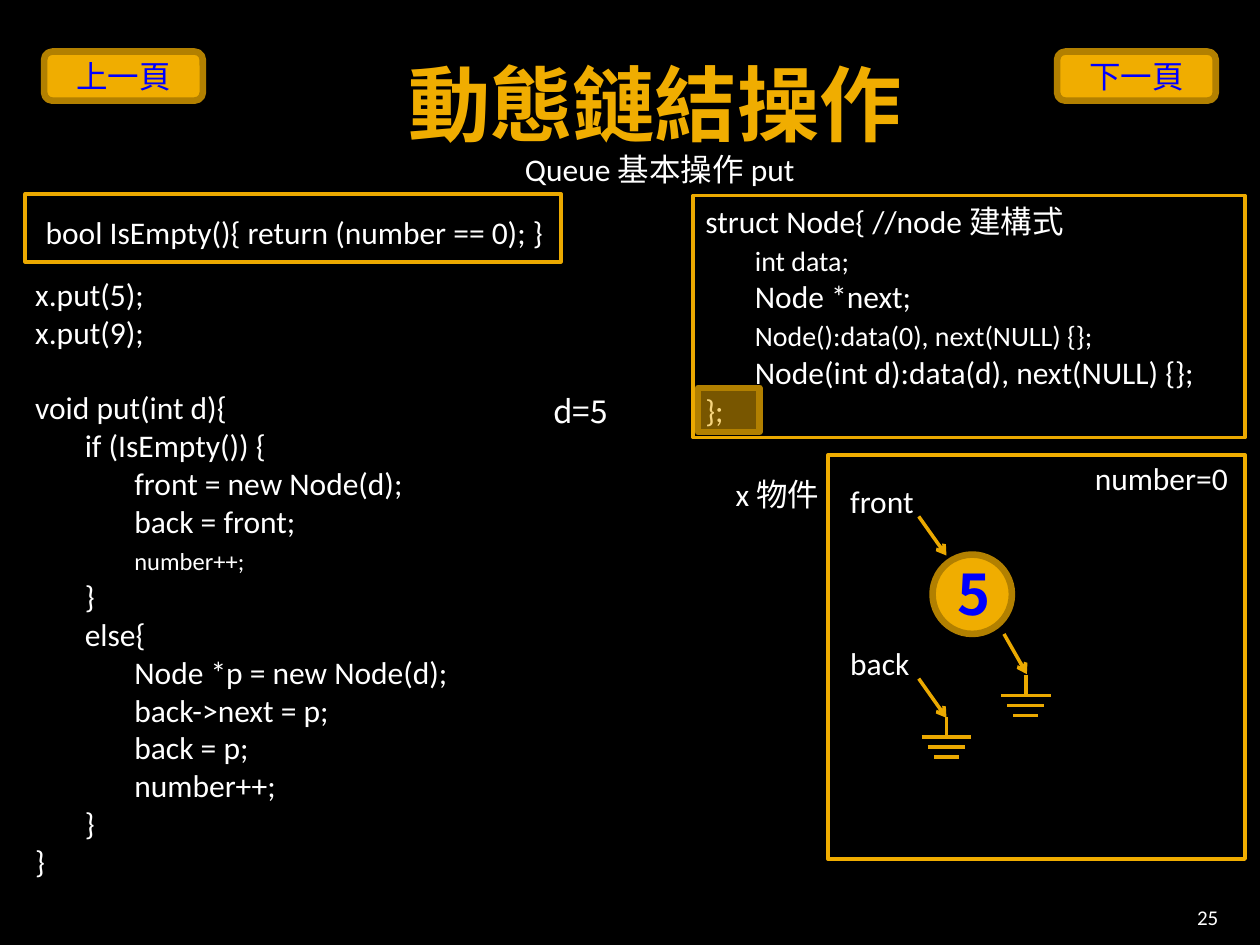
from dataclasses import dataclass, field

from lxml import etree
from pptx import Presentation
from pptx.dml.color import RGBColor
from pptx.enum.shapes import MSO_CONNECTOR, MSO_SHAPE
from pptx.enum.text import MSO_ANCHOR, PP_ALIGN
from pptx.oxml.ns import qn
from pptx.util import Cm, Pt

RECT, ROUNDED, OVAL = MSO_SHAPE.RECTANGLE, MSO_SHAPE.ROUNDED_RECTANGLE, MSO_SHAPE.OVAL
LEFT, CENTER, RIGHT = PP_ALIGN.LEFT, PP_ALIGN.CENTER, PP_ALIGN.RIGHT
TOP, MIDDLE, BOTTOM = MSO_ANCHOR.TOP, MSO_ANCHOR.MIDDLE, MSO_ANCHOR.BOTTOM
STRAIGHT = MSO_CONNECTOR.STRAIGHT

COLORS = {"background": "000000", "text": "FFFFFF", "gold": "F0AD00",
          "line": "EBA900", "edge": "B28000", "link": "0000FF"}
LATIN, CJK = "Calibri", "Noto Sans CJK SC"
BODY_SIZE = 18
TAB_CM = 1
PANEL_LINE, EDGE_LINE = 2, 3.78
DEFAULT_INSETS = (0.25, 0.13, 0.25, 0.13)
CODE_INSETS = (0.41, 0, 0.13, 0)

NODE_CODE = """struct Node{ //node 建構式
\tint data;
\tNode *next;
\tNode():data(0), next(NULL) {};
\tNode(int d):data(d), next(NULL) {};
};"""

PUT_CODE = """x.put(5);
x.put(9);

void put(int d){
\tif (IsEmpty()) {
\t\tfront = new Node(d);
\t\tback = front;
\t\tnumber++;
\t}
\telse{
\t\tNode *p = new Node(d);
\t\tback->next = p;
\t\tback = p;
\t\tnumber++;
\t}
}"""


@dataclass
class Box:
    """Left, top, width and height in centimetres."""
    left: float
    top: float
    width: float
    height: float

    def lengths(self) -> list:
        return [Cm(v) for v in (self.left, self.top, self.width, self.height)]


@dataclass
class Style:
    size: float = BODY_SIZE
    color: str = "text"
    font: str = LATIN
    bold: bool = False
    align: PP_ALIGN = LEFT
    anchor: MSO_ANCHOR = TOP
    insets: tuple = DEFAULT_INSETS
    spacing: float = 1.0
    small_lines: dict = field(default_factory=dict)


def rgb(name: str) -> RGBColor:
    return RGBColor.from_string(COLORS[name])


def add_run(paragraph, text: str, style: Style, size: float) -> None:
    run = paragraph.add_run()
    run.text = text
    formats = {"name": style.font, "size": Pt(size), "bold": style.bold}
    for attribute, value in formats.items():
        setattr(run.font, attribute, value)
    run.font.color.rgb = rgb(style.color)
    east_asian = etree.SubElement(run.font._element, qn("a:ea"))
    east_asian.set("typeface", CJK)


def add_tab_stops(paragraph, levels: int) -> None:
    stops = etree.SubElement(paragraph._p.get_or_add_pPr(), qn("a:tabLst"))
    for level in range(1, levels + 1):
        etree.SubElement(stops, qn("a:tab"), pos=str(Cm(level * TAB_CM)), algn="l")


def write(shape, text: str, style: Style) -> None:
    """Fill a shape with text; small_lines maps a line index to its own size."""
    frame = shape.text_frame
    margins = dict(zip(("margin_left", "margin_top", "margin_right", "margin_bottom"),
                       map(Cm, style.insets)))
    formats = {"word_wrap": True, "vertical_anchor": style.anchor, **margins}
    for attribute, value in formats.items():
        setattr(frame, attribute, value)
    for index, line in enumerate(text.split("\n")):
        paragraph = frame.add_paragraph() if index else frame.paragraphs[0]
        paragraph.alignment = style.align
        paragraph.line_spacing = style.spacing
        paragraph.font.size = Pt(BODY_SIZE)
        words = line.lstrip("\t")
        depth = len(line) - len(words)
        if depth:
            add_tab_stops(paragraph, depth)
            add_run(paragraph, "\t" * depth, style, style.size)
        if words:
            add_run(paragraph, words, style, style.small_lines.get(index, style.size))


def add_text(slide, box: Box, text: str, style: Style) -> None:
    write(slide.shapes.add_textbox(*box.lengths()), text, style)


def add_panel(slide, kind: MSO_SHAPE, box: Box, line: str, width: float, fill: str = ""):
    shape = slide.shapes.add_shape(kind, *box.lengths())
    shape.shadow.inherit = False
    if fill:
        shape.fill.solid()
        shape.fill.fore_color.rgb = rgb(fill)
    else:
        shape.fill.background()
    shape.line.color.rgb = rgb(line)
    shape.line.width = Pt(width)
    return shape


def add_line(slide, x1: float, y1: float, x2: float, y2: float, arrow: bool = False) -> None:
    line = slide.shapes.add_connector(STRAIGHT, Cm(x1), Cm(y1), Cm(x2), Cm(y2))
    line.line.color.rgb = rgb("line")
    line.line.width = Pt(PANEL_LINE)
    if arrow:
        etree.SubElement(line.line._get_or_add_ln(), qn("a:tailEnd"), type="arrow")
    etree.SubElement(line._element.spPr, qn("a:effectLst"))


def add_ground(slide, x: float, top: float) -> None:
    """Draw the null-pointer symbol: a stem over three shrinking bars."""
    bars_top = top + 0.41
    add_line(slide, x, top, x, bars_top)
    for index, width in enumerate((1.0, 0.75, 0.5)):
        y = bars_top + index * 0.2
        add_line(slide, x - width / 2, y, x + width / 2, y)


def add_pointer(slide, name: str, top: float) -> None:
    add_text(slide, Box(16.89, top, 1.83, 1.02), name, Style())
    add_line(slide, 18.52, top + 0.83, 19.08, top + 1.62, arrow=True)


def main() -> None:
    deck = Presentation()
    deck.slide_width, deck.slide_height = Cm(25.4), Cm(19.05)
    slide = deck.slides.add_slide(deck.slide_layouts[6])
    slide.background.fill.solid()
    slide.background.fill.fore_color.rgb = rgb("background")

    node_panel = add_panel(slide, RECT, Box(13.97, 3.94, 11.13, 4.88), "line", PANEL_LINE)
    write(node_panel, NODE_CODE, Style(small_lines={1: 16, 3: 16}))
    empty_panel = add_panel(slide, RECT, Box(0.51, 3.91, 10.8, 1.37), "line", PANEL_LINE)
    write(empty_panel, "bool IsEmpty(){ return (number == 0); }",
          Style(insets=CODE_INSETS, spacing=1.5))

    add_text(slide, Box(2.08, 0.53, 22.25, 2.54), "動態鏈結操作",
             Style(47, "gold", bold=True, align=CENTER, anchor=BOTTOM,
                   insets=(0.25, 0, 0.25, 0)))
    add_text(slide, Box(0.3, 5.54, 11, 13.26), PUT_CODE,
             Style(insets=CODE_INSETS, small_lines={7: 14}))
    add_text(slide, Box(22.78, 17.98, 2.03, 0.76), "25",
             Style(12, align=RIGHT, anchor=BOTTOM, insets=(0.25, 0.13, 0.25, 0)))
    add_text(slide, Box(10.29, 2.9, 6.02, 1.02), "Queue 基本操作 put", Style(align=CENTER))

    add_panel(slide, RECT, Box(16.69, 9.17, 8.41, 8.15), "gold", PANEL_LINE)
    highlight = add_panel(slide, RECT, Box(14.07, 7.82, 1.24, 0.89), "edge", EDGE_LINE, "gold")
    gold = highlight.fill._xPr.find(qn("a:solidFill"))[0]
    etree.SubElement(gold, qn("a:alpha"), val="50000")

    add_text(slide, Box(14.58, 9.45, 2.21, 1.02), "x 物件", Style())
    add_text(slide, Box(21.82, 9.12, 3.25, 1.02), "number=0", Style())
    add_text(slide, Box(10.9, 7.77, 1.75, 1.02), "d=5", Style(font=CJK))

    button_style = Style(color="link", font=CJK, align=CENTER, anchor=MIDDLE)
    for label, left in (("上一頁", 0.89), ("下一頁", 21.31)):
        button = add_panel(slide, ROUNDED, Box(left, 1.04, 3.2, 0.99), "edge", EDGE_LINE, "gold")
        write(button, label, button_style)

    add_pointer(slide, "front", 9.58)
    add_pointer(slide, "back", 12.85)
    add_ground(slide, 19.08, 14.45)

    add_panel(slide, OVAL, Box(18.8, 11.18, 1.6, 1.6), "edge", EDGE_LINE, "gold")
    add_text(slide, Box(19.05, 11.15, 1.19, 1.63), "5", Style(32, "link", CJK, bold=True))
    add_line(slide, 20.24, 12.78, 20.7, 13.59, arrow=True)
    add_ground(slide, 20.68, 13.61)

    deck.save("out.pptx")


if __name__ == "__main__":
    main()
